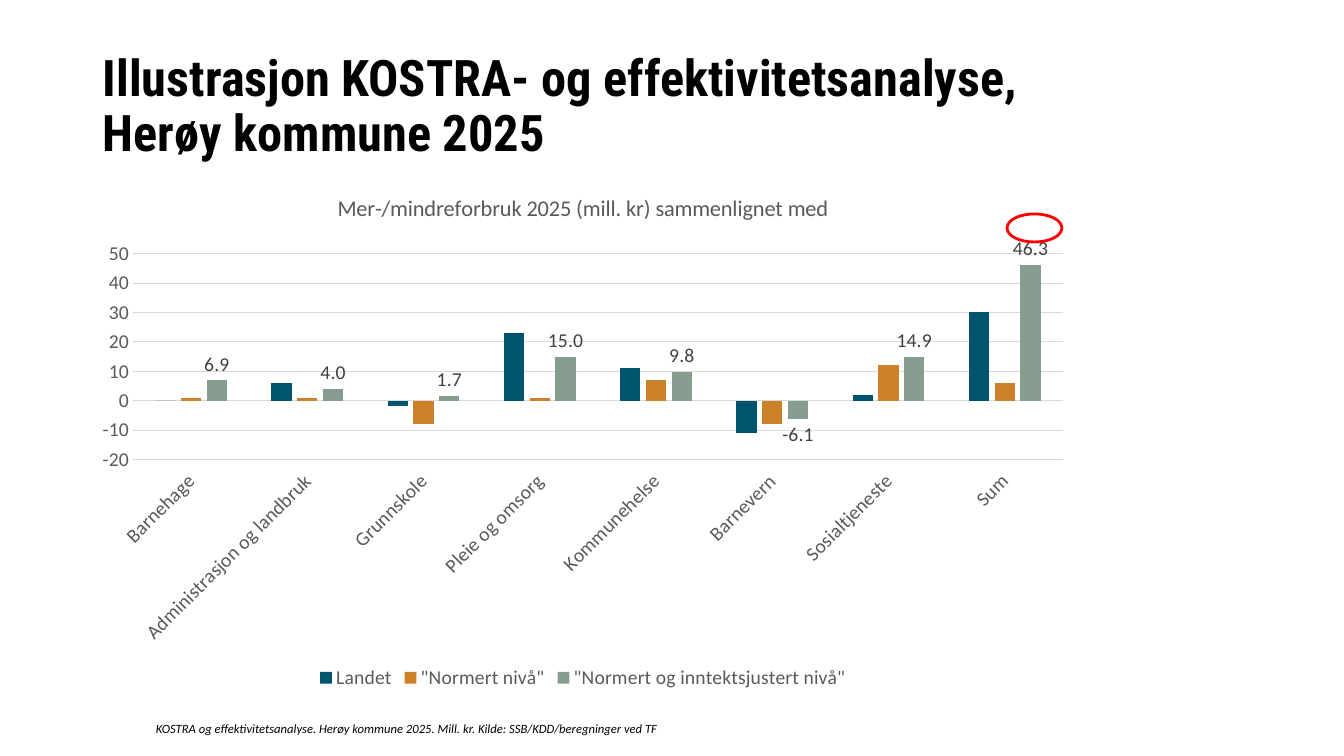
from lxml import etree
from pptx import Presentation
from pptx.chart.data import CategoryChartData
from pptx.dml.color import RGBColor
from pptx.enum.chart import (XL_CHART_TYPE as ChartType, XL_LABEL_POSITION as LabelPos,
                             XL_LEGEND_POSITION as LegendPos, XL_TICK_LABEL_POSITION as TickLabelPos,
                             XL_TICK_MARK as TickMark)
from pptx.enum.shapes import MSO_SHAPE as Shape
from pptx.enum.text import MSO_ANCHOR as Anchor, MSO_AUTO_SIZE as AutoSize
from pptx.oxml import parse_xml
from pptx.oxml.ns import nsdecls, qn
from pptx.util import Pt

EMU_PER_PX = 914400 / 100.8
BLACK = RGBColor(0x00, 0x00, 0x00)
AXIS_GREY = RGBColor(0x59, 0x59, 0x59)
LABEL_GREY = RGBColor(0x40, 0x40, 0x40)
GRID_GREY = RGBColor(0xD9, 0xD9, 0xD9)
RED = RGBColor(0xFF, 0x00, 0x00)
PETROL = RGBColor(0x00, 0x54, 0x6D)
OCHRE = RGBColor(0xCC, 0x80, 0x29)
SAGE = RGBColor(0x86, 0x9C, 0x8F)

SERVICES = ["Barnehage", "Administrasjon og landbruk", "Grunnskole", "Pleie og omsorg",
            "Kommunehelse", "Barnevern", "Sosialtjeneste", "Sum"]
SPENDING = [
    ("Landet", PETROL, (0, 6, -2, 23, 11, -11, 2, 30)),
    ('"Normert nivå"', OCHRE, (1, 1, -8, 1, 7, -8, 12, 6)),
    ('"Normert og inntektsjustert nivå"', SAGE, (6.9, 4, 1.7, 15, 9.8, -6.1, 14.9, 46.3)),
]


def px(*lengths):
    return [round(length * EMU_PER_PX) for length in lengths]


def set_font(font, size, color, name="Calibri", bold=False, italic=False):
    font.size, font.name = Pt(size), name
    font.bold, font.italic = bold, italic
    font.color.rgb = color


class SlideBuilder:
    def __init__(self, slide):
        self.slide = slide
        self.shapes = slide.shapes

    def text(self, box, wording, anchor=Anchor.TOP, spacing=None, after=0,
             auto_size=AutoSize.NONE, **font):
        frame = self.shapes.add_textbox(*px(*box)).text_frame
        frame.word_wrap = True
        frame.auto_size = auto_size
        frame.vertical_anchor = anchor
        paragraph = frame.paragraphs[0]
        paragraph.text = wording
        paragraph.line_spacing = spacing
        paragraph.space_after = Pt(after)
        set_font(paragraph.font, **font)

    def ring(self, box, color, width):
        ring = self.shapes.add_shape(Shape.OVAL, *px(*box))
        ring.shadow.inherit = False
        ring.fill.background()
        ring.line.color.rgb = color
        ring.line.width = Pt(width)

    def columns(self, box, title, categories, series):
        data = CategoryChartData(number_format="0.0")
        data.categories = categories
        for name, _, values in series:
            data.add_series(name, values)
        chart = self.shapes.add_chart(ChartType.COLUMN_CLUSTERED, *px(*box), data).chart
        set_font(chart.font, 14, BLACK)
        chart.has_title = True
        heading = chart.chart_title.text_frame.paragraphs[0]
        heading.text = title
        set_font(heading.font, 16, AXIS_GREY)
        chart.chart_title.include_in_layout = False
        chart.has_legend = True
        chart.legend.position = LegendPos.BOTTOM
        chart.legend.include_in_layout = False
        set_font(chart.legend.font, 14, AXIS_GREY)

        plot = chart.plots[0]
        plot.gap_width, plot.overlap, plot.vary_by_categories = 219, -27, False
        for column, (_, color, _) in zip(plot.series, series):
            column.format.fill.solid()
            column.format.fill.fore_color.rgb = color
            column.invert_if_negative = False
        self.value_labels(plot.series[-1])
        self.axes(chart)
        self.place_plot(chart, x=0.05, y=0.155, w=0.93, h=0.395)

    def value_labels(self, series):
        labels = series.data_labels
        labels.show_value = True
        labels.number_format, labels.number_format_is_linked = "0.0", False
        labels.position = LabelPos.OUTSIDE_END
        set_font(labels.font, 14, LABEL_GREY)

    def axes(self, chart):
        for axis in (chart.category_axis, chart.value_axis):
            axis.major_tick_mark = axis.minor_tick_mark = TickMark.NONE
            set_font(axis.tick_labels.font, 14, AXIS_GREY)
        services, amounts = chart.category_axis, chart.value_axis
        services.tick_label_position = TickLabelPos.LOW
        services.tick_labels.font._element.getparent().getparent().getparent().find(
            qn("a:bodyPr")).set("rot", "-2700000")
        amounts.minimum_scale, amounts.maximum_scale, amounts.major_unit = -20, 50, 10
        amounts.tick_labels.number_format = "0"
        amounts.tick_labels.number_format_is_linked = False
        amounts.format.line.fill.background()
        amounts.has_major_gridlines = True
        for line in (services.format.line, amounts.major_gridlines.format.line):
            line.color.rgb = GRID_GREY
            line.width = Pt(0.75)

    def place_plot(self, chart, **fractions):
        """Fix the inner plot area as fractions of the chart frame."""
        area = chart._chartSpace.chart.plotArea
        for automatic in area.findall(qn("c:layout")):
            area.remove(automatic)
        layout = parse_xml(f"<c:layout {nsdecls('c')}><c:manualLayout/></c:layout>")
        settings = [("layoutTarget", "inner"), ("xMode", "edge"), ("yMode", "edge"),
                    *fractions.items()]
        for tag, value in settings:
            etree.SubElement(layout[0], qn(f"c:{tag}")).set("val", str(value))
        area.insert(0, layout)


def main():
    deck = Presentation()
    deck.slide_width, deck.slide_height = px(1344, 756)
    builder = SlideBuilder(deck.slides.add_slide(deck.slide_layouts[6]))
    builder.text((93, 21, 1159, 146),
                 "Illustrasjon KOSTRA- og effektivitetsanalyse,\vHerøy kommune 2025",
                 anchor=Anchor.BOTTOM, spacing=0.9, size=36, color=BLACK,
                 name="Roboto Condensed", bold=True)
    builder.text((146, 716, 826, 25),
                 "KOSTRA og effektivitetsanalyse. Herøy kommune 2025. Mill. kr. "
                 "Kilde: SSB/KDD/beregninger ved TF",
                 after=12, auto_size=AutoSize.SHAPE_TO_FIT_TEXT, size=9, color=BLACK, italic=True)
    builder.columns((83, 173, 1000, 521),
                    "Mer-/mindreforbruk 2025 (mill. kr) sammenlignet med", SERVICES, SPENDING)
    builder.ring((1007, 214, 55, 28), RED, 2)
    deck.save("out.pptx")


if __name__ == "__main__":
    main()
